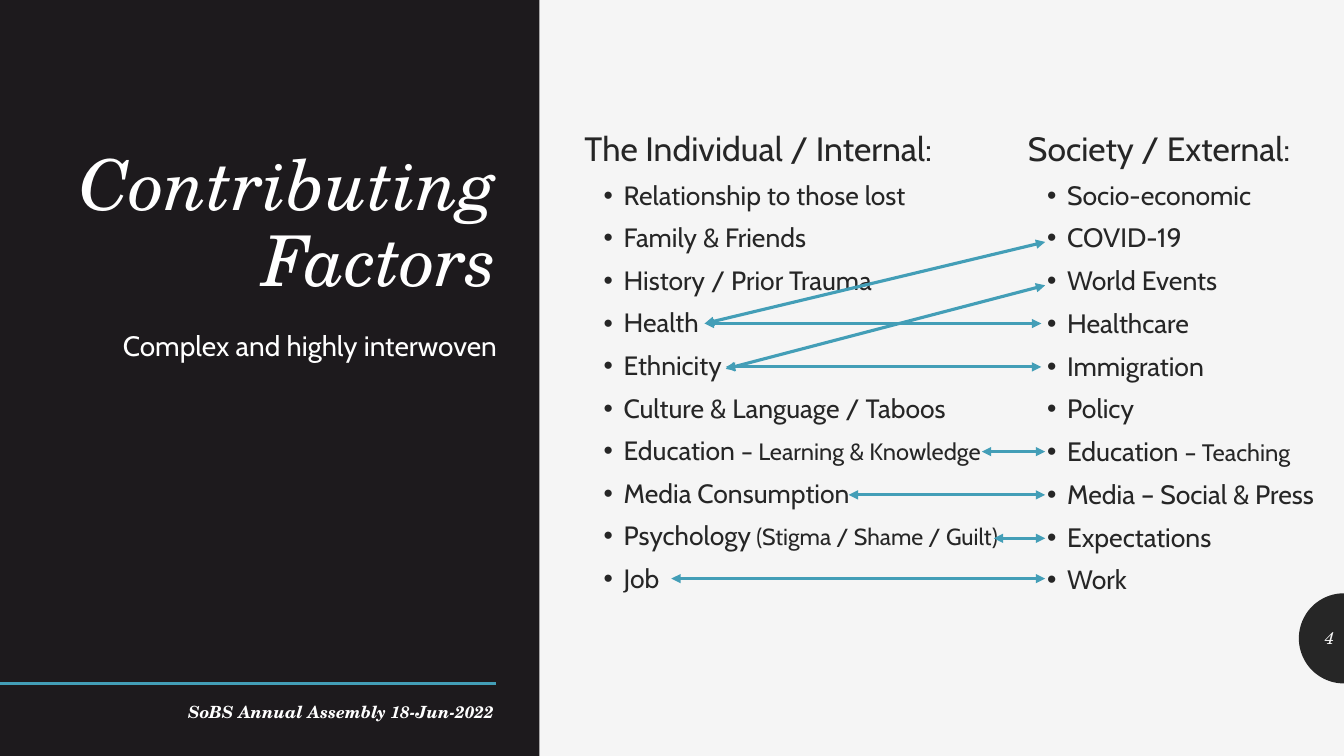
from math import cos, pi, sin

from lxml import etree
from pptx import Presentation
from pptx.dml.color import RGBColor
from pptx.enum.shapes import MSO_CONNECTOR, MSO_SHAPE
from pptx.enum.text import MSO_ANCHOR, PP_ALIGN
from pptx.oxml.ns import qn
from pptx.util import Pt

STRAIGHT, RECTANGLE = MSO_CONNECTOR.STRAIGHT, MSO_SHAPE.RECTANGLE
TOP, MIDDLE, BOTTOM = MSO_ANCHOR.TOP, MSO_ANCHOR.MIDDLE, MSO_ANCHOR.BOTTOM
LEFT, RIGHT = PP_ALIGN.LEFT, PP_ALIGN.RIGHT

PAPER = RGBColor(0xF5, 0xF5, 0xF5)
PANEL = RGBColor(0x1D, 0x1A, 0x1D)
INK = RGBColor(0x26, 0x26, 0x26)
TEAL = RGBColor(0x43, 0x9E, 0xB7)
WHITE = RGBColor(0xFF, 0xFF, 0xFF)

SANS, SERIF = "Cabin", "TeX Gyre Schola"

# Heading size, item size, then items; an item may carry a smaller trailing part.
INTERNAL = (24.1, 18.9, "The Individual / Internal:", [
    ("Relationship to those lost",),
    ("Family & Friends",),
    ("History / Prior Trauma",),
    ("Health",),
    ("Ethnicity",),
    ("Culture & Language / Taboos",),
    ("Education ", "– Learning & Knowledge", 16.9),
    ("Media Consumption",),
    ("Psychology", " (Stigma / Shame / Guilt)", 16.6),
    ("Job",),
])
EXTERNAL = (24, 19, "Society / External:", [
    ("Socio-economic",),
    ("COVID-19",),
    ("World Events",),
    ("Healthcare",),
    ("Immigration",),
    ("Policy",),
    ("Education ", "– Teaching", 17),
    ("Media – Social & Press",),
    ("Expectations",),
    ("Work",),
])

# Start x, start y, end x, end y
LINKS = [
    (503.3, 231.1, 743.8, 231.1),
    (701.3, 322.6, 746.6, 322.6),
    (709.9, 384.5, 746.6, 384.5),
    (606.2, 353.5, 746.6, 353.5),
    (479.5, 413.3, 746.6, 413.3),
    (518.4, 262.1, 743.8, 262.1),
    (503.3, 231.1, 746.6, 172.8),
    (518.4, 263.5, 746.6, 203.8),
]


class SlideBuilder:
    def __init__(self, deck):
        self.page = deck.slides.add_slide(deck.slide_layouts[5])
        fill = self.page.background.fill
        fill.solid()
        fill.fore_color.rgb = PAPER

    def paint(self, shape, color):
        shape.shadow.inherit = False
        shape.fill.solid()
        shape.fill.fore_color.rgb = color
        shape.line.fill.background()

    def rectangle(self, left, top, width, height, color):
        shape = self.page.shapes.add_shape(
            RECTANGLE, Pt(left), Pt(top), Pt(width), Pt(height))
        self.paint(shape, color)

    def left_half_disc(self, center_x, center_y, radius, color, steps=48):
        angles = [pi / 2 + pi * step / steps for step in range(steps + 1)]
        points = [(Pt(center_x + radius * cos(a)), Pt(center_y + radius * sin(a)))
                  for a in angles]
        outline = self.page.shapes.build_freeform(*points[0])
        outline.add_line_segments(points[1:], close=True)
        self.paint(outline.convert_to_shape(), color)

    def line(self, ends, width, arrows=False):
        connector = self.page.shapes.add_connector(STRAIGHT, *map(Pt, ends))
        connector.line.color.rgb = TEAL
        connector.line.width = Pt(width)
        if arrows:
            outline = connector.line._get_or_add_ln()
            for end in ("a:headEnd", "a:tailEnd"):
                etree.SubElement(outline, qn(end), type="triangle")
        etree.SubElement(connector.element.spPr, qn("a:effectLst"))

    def text_box(self, left, top, width, height, anchor=TOP):
        box = self.page.shapes.add_textbox(0, 0, 0, 0)
        return self.place(box, left, top, width, height, anchor)

    def title(self, text, left, top, width, height, **font):
        """Fill the title placeholder and bring it in front of the panel."""
        box = self.page.shapes.title
        self.page.shapes.element.append(box.element)
        frame = self.place(box, left, top, width, height, BOTTOM)
        self.paragraph(frame, [(text, font)], alignment=RIGHT, line_spacing=0.9)

    def place(self, box, left, top, width, height, anchor):
        bounds = {"left": left, "top": top, "width": width, "height": height}
        for name, value in bounds.items():
            setattr(box, name, Pt(value))
        frame = box.text_frame
        frame.word_wrap = True
        frame.vertical_anchor = anchor
        frame.margin_left = Pt(7.2)
        frame.margin_right = Pt(7.2)
        return frame

    def paragraph(self, frame, spans, bullet=False, **layout):
        """Write spans of (text, font values) into the next paragraph."""
        first = not frame.paragraphs[0].runs
        para = frame.paragraphs[0] if first else frame.add_paragraph()
        if bullet:
            properties = para._p.get_or_add_pPr()
            properties.set("marL", str(Pt(28)))
            properties.set("indent", str(Pt(-14.4)))
            etree.SubElement(properties, qn("a:buFont"), typeface="Arial")
            etree.SubElement(properties, qn("a:buChar"), char="•")
        for name, value in layout.items():
            setattr(para, name, value)
        for text, values in spans:
            span = para.add_run()
            span.text = text
            for name, value in values.items():
                if name == "color":
                    span.font.color.rgb = value
                else:
                    setattr(span.font, name, value)

    def factor_list(self, left, width, column):
        heading_size, item_size, heading, items = column
        frame = self.text_box(left, 90.7, width, 375)
        frame.margin_right = 0
        font = {"name": SANS, "color": INK}
        self.paragraph(frame, [(heading, {**font, "size": Pt(heading_size)})],
                       alignment=LEFT, line_spacing=0.9)
        for text, *detail in items:
            spans = [(text, {**font, "size": Pt(item_size)})]
            if detail:
                spans.append((detail[0], {**font, "size": Pt(detail[1])}))
            self.paragraph(frame, spans, bullet=True, alignment=LEFT,
                           line_spacing=0.9, space_before=Pt(10))


def main():
    deck = Presentation()
    deck.slide_width, deck.slide_height = Pt(960), Pt(540)
    slide = SlideBuilder(deck)

    slide.left_half_disc(960, 456, 32.2, INK)
    slide.rectangle(0, 0, 385.4, 540, PANEL)
    slide.line((0, 488.2, 354.2, 488.2), 2)

    slide.title("Contributing Factors", 49, 43.9, 313.2, 175, name=SERIF,
                size=Pt(50), italic=True, bold=False, color=WHITE)
    number = slide.text_box(928, 441.4, 32, 28.8, MIDDLE)
    slide.paragraph(number, [("4", {"name": SERIF, "size": Pt(12), "italic": True,
                                    "color": PAPER})], alignment=RIGHT)
    subtitle = slide.text_box(59.8, 228.2, 302.4, 224.6)
    slide.paragraph(subtitle, [("Complex and highly interwoven",
                                {"name": SANS, "size": Pt(20), "color": WHITE})],
                    alignment=RIGHT, line_spacing=1.12)

    slide.factor_list(410.4, 311, INTERNAL)
    slide.factor_list(727.2, 225.4, EXTERNAL)
    for ends in LINKS:
        slide.line(ends, 2.25, arrows=True)

    footer = slide.text_box(59.8, 497.5, 300.2, 28.8)
    slide.paragraph(footer, [("SoBS Annual Assembly 18-Jun-2022",
                              {"name": SERIF, "size": Pt(12), "bold": True,
                               "italic": True, "color": WHITE})], alignment=RIGHT)
    deck.save("out.pptx")


if __name__ == "__main__":
    main()
